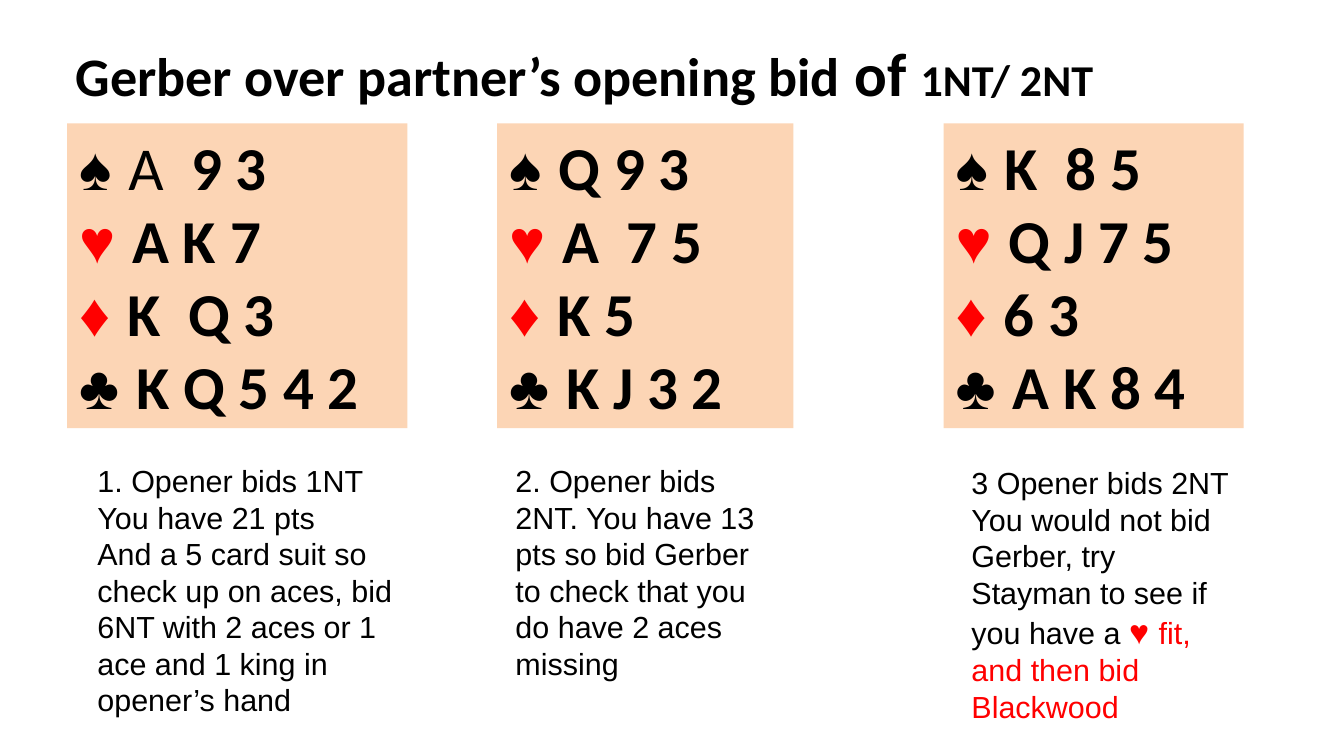
from pptx import Presentation
from pptx.dml.color import RGBColor
from pptx.enum.shapes import MSO_SHAPE
from pptx.enum.text import MSO_ANCHOR, MSO_AUTO_SIZE, PP_ALIGN
from pptx.util import Cm, Pt

RECT = MSO_SHAPE.RECTANGLE
TOP = MSO_ANCHOR.TOP
MID = MSO_ANCHOR.MIDDLE
FIXED = MSO_AUTO_SIZE.NONE
LEFT = PP_ALIGN.LEFT

BLACK = "000000"
RED = "FF0000"
PEACH = "FCD5B5"
SUITS = [("♠ ", BLACK), ("♥ ", RED), ("♦ ", RED), ("♣ ", BLACK)]

HANDS = [
    ((1.4, 2.57, 7.09, 6.35), ["A  9 3", "A K 7", "K  Q 3", "K Q 5 4 2"], 1),
    ((10.36, 2.57, 6.17, 6.35), ["Q 9 3", "A  7 5", "K 5", "K J 3 2"], 0),
    ((19.66, 2.57, 6.25, 6.35), ["K  8 5", "Q J 7 5", "6 3", "A K 8 4"], 0),
]

NOTES = [
    ((1.78, 9.5, 6.71, 5.99), [
        [("1. Opener bids 1NT", {})],
        [("You have 21 pts", {})],
        [("And a 5 card suit so check up on aces, bid 6NT with 2 aces "
          "or 1 ace and 1 king in opener’s hand", {})],
    ]),
    ((10.49, 9.5, 5.99, 4.67), [
        [("2. Opener bids 2NT. You have 13 pts so bid Gerber to check "
          "that you do have 2 aces missing", {})],
    ]),
    ((19.99, 9.55, 5.99, 5.38), [
        [("3 Opener bids 2NT", {})],
        [("You would not bid Gerber, try Stayman to see if you have a ", {}),
         ("♥ ", {"size": 20, "bold": True, "color": RED}),
         ("fit, and then bid Blackwood", {"color": RED})],
    ]),
]


def paint(text):
    return RGBColor.from_string(text)


def add_run(para, text, font="Arial", size=18, bold=False, color=BLACK):
    run = para.add_run()
    run.text = text
    run.font.name = font
    run.font.size = Pt(size)
    run.font.bold = bold
    run.font.color.rgb = paint(color)


def write(shape, lines, anchor=TOP, **style):
    frame = shape.text_frame
    frame.word_wrap = True
    frame.auto_size = FIXED
    frame.vertical_anchor = anchor
    for i, line in enumerate(lines):
        para = frame.add_paragraph() if i else frame.paragraphs[0]
        para.alignment = LEFT
        for text, extra in line:
            add_run(para, text, **{**style, **extra})


def add_title(slide, box):
    title = slide.shapes.title
    title.left, title.top, title.width, title.height = map(Cm, box)
    line = [
        ("Gerber over partner’s opening bid", {"size": 32}),
        (" of ", {"size": 36}),
        ("1NT/ 2NT", {"size": 26}),
    ]
    write(title, [line], anchor=MID, font="Calibri", bold=True)


def add_hand(slide, box, cards, light):
    card = slide.shapes.add_shape(RECT, *map(Cm, box))
    card.shadow.inherit = False
    card.fill.solid()
    card.fill.fore_color.rgb = paint(PEACH)
    card.line.fill.background()
    lines = []
    for i, ((suit, color), ranks) in enumerate(zip(SUITS, cards)):
        thin = light if i == 0 else 0
        line = [(suit, {"color": color, "bold": not thin})]
        if thin:
            line.append((ranks[:thin], {"font": "Calibri", "bold": False}))
        line.append((ranks[thin:], {"font": "Calibri"}))
        lines.append(line)
    write(card, lines, size=36, bold=True)


def add_note(slide, box, lines):
    write(slide.shapes.add_textbox(*map(Cm, box)), lines)


def main():
    deck = Presentation()
    deck.slide_width = Cm(28)
    deck.slide_height = Cm(15.75)
    slide = deck.slides.add_slide(deck.slide_layouts[5])
    add_title(slide, (1.32, 0.61, 24.67, 1.78))
    for box, cards, light in HANDS:
        add_hand(slide, box, cards, light)
    for box, lines in NOTES:
        add_note(slide, box, lines)
    deck.save("out.pptx")


if __name__ == "__main__":
    main()
